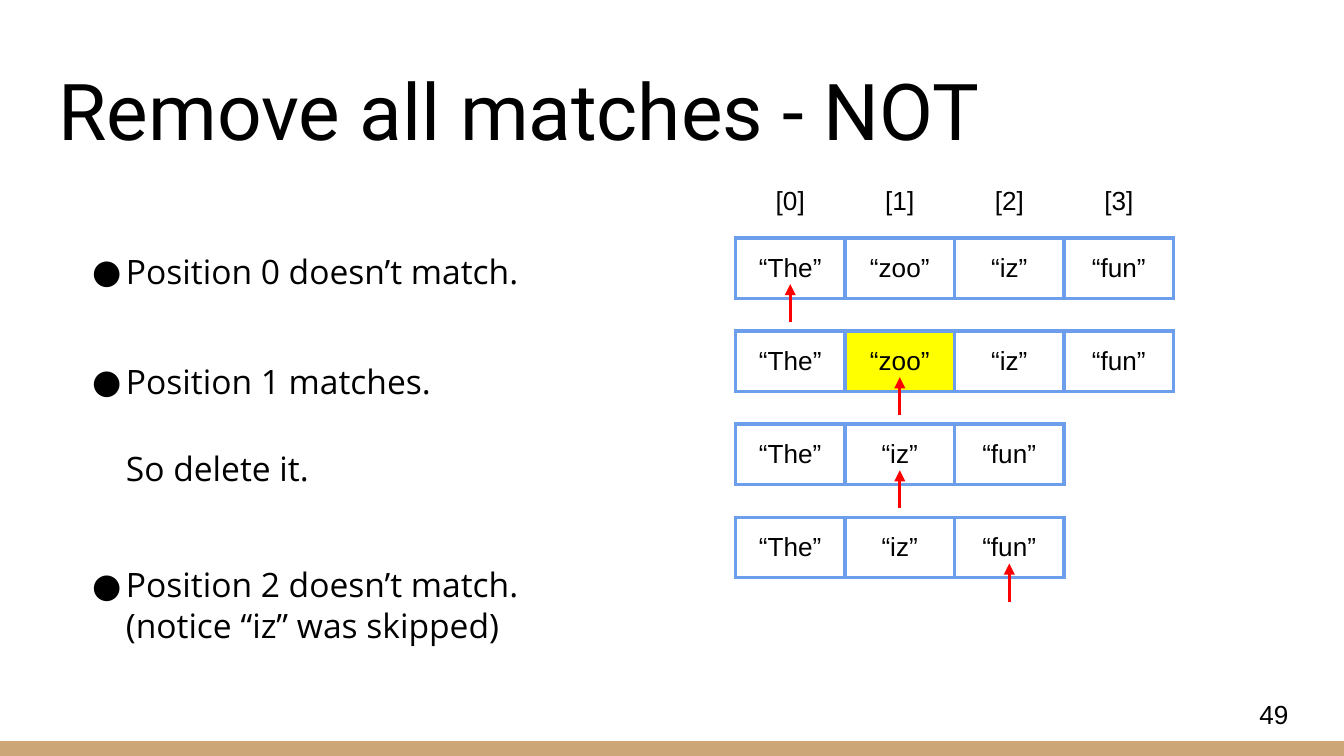
from lxml import etree
from pptx import Presentation
from pptx.dml.color import RGBColor
from pptx.enum.shapes import MSO_CONNECTOR, MSO_SHAPE
from pptx.enum.text import MSO_ANCHOR, PP_ALIGN
from pptx.oxml import parse_xml
from pptx.oxml.ns import qn
from pptx.util import Cm, Pt

STRAIGHT = MSO_CONNECTOR.STRAIGHT
RECTANGLE = MSO_SHAPE.RECTANGLE
TOP, MIDDLE, BOTTOM = MSO_ANCHOR.TOP, MSO_ANCHOR.MIDDLE, MSO_ANCHOR.BOTTOM
LEFT, CENTER = PP_ALIGN.LEFT, PP_ALIGN.CENTER

DRAWING = "http://schemas.openxmlformats.org/drawingml/2006/main"
BLACK, WHITE, YELLOW = "000000", "FFFFFF", "FFFF00"
RED, BLUE, TAN = "FF0000", "6D9EEB", "CCA677"
INSET = Cm(0.25)
COLUMN_WIDTH, ROW_HEIGHT, ROW_PITCH = 2.07, 1.14, 1.76

BULLETS = [
    ("Position 0 doesn’t match.", True, 37),
    ("Position 1 matches.", True, 25),
    ("So delete it.", False, 40),
    ("Position 2 doesn’t match.\v(notice “iz” was skipped)", True, 0),
]
STEPS = [
    (["“The”", "“zoo”", "“iz”", "“fun”"], 0, None),
    (["“The”", "“zoo”", "“iz”", "“fun”"], 1, 1),
    (["“The”", "“iz”", "“fun”"], 1, None),
    (["“The”", "“iz”", "“fun”"], 2, None),
]


def color(value):
    """Turn a hex string into a colour."""
    return RGBColor.from_string(value)


def write(paragraph, text, font="Arial", size=14, align=LEFT, line_spacing=1.0, space_after=0):
    """Write formatted text into a paragraph."""
    paragraph.text = text
    paragraph.alignment = align
    paragraph.line_spacing = line_spacing
    paragraph.space_after = Pt(space_after)
    for run in paragraph.runs:
        run.font.name = font
        run.font.size = Pt(size)
        run.font.color.rgb = color(BLACK)


def set_insets(target):
    """Give a text frame or cell equal margins."""
    target.margin_left = target.margin_right = INSET
    target.margin_top = target.margin_bottom = INSET


def add_frame(slide, box, anchor):
    """Add a wrapping text box and return its text frame."""
    frame = slide.shapes.add_textbox(*map(Cm, box)).text_frame
    frame.word_wrap = True
    frame.vertical_anchor = anchor
    set_insets(frame)
    return frame


def add_label(slide, box, text, anchor, **text_format):
    """Add a text box with one paragraph."""
    write(add_frame(slide, box, anchor).paragraphs[0], text, **text_format)


def indent(paragraph, bulleted):
    """Indent a paragraph and give it a round bullet if wanted."""
    properties = paragraph._p.get_or_add_pPr()
    properties.set("marL", str(Cm(1.27)))
    properties.set("indent", str(Cm(-0.64) if bulleted else 0))
    if bulleted:
        etree.SubElement(properties, qn("a:buFont"), typeface="Open Sans")
        etree.SubElement(properties, qn("a:buChar"), char="●")


def add_bullets(slide, box):
    """Add the explanation of each step."""
    frame = add_frame(slide, box, TOP)
    for index, (text, bulleted, space_after) in enumerate(BULLETS):
        paragraph = frame.add_paragraph() if index else frame.paragraphs[0]
        write(paragraph, text, font="Open Sans", size=18,
              line_spacing=1.02, space_after=space_after)
        indent(paragraph, bulleted)


def add_borders(cell):
    """Draw all four borders of a cell."""
    properties = cell._tc.get_or_add_tcPr()
    for position, side in enumerate(("lnL", "lnR", "lnT", "lnB")):
        properties.insert(position, parse_xml(
            f'<a:{side} xmlns:a="{DRAWING}" w="{Pt(2.25)}"><a:solidFill>'
            f'<a:srgbClr val="{BLUE}"/></a:solidFill></a:{side}>'))


def add_list_row(slide, left, top, texts, bordered=True, highlight=None):
    """Add one row of list cells as a table."""
    frame = slide.shapes.add_table(1, len(texts), Cm(left), Cm(top),
                                   Cm(COLUMN_WIDTH * len(texts)), Cm(ROW_HEIGHT))
    table = frame.table
    table.first_row = table.horz_banding = False
    for index, text in enumerate(texts):
        cell = table.cell(0, index)
        cell.vertical_anchor = MIDDLE
        set_insets(cell)
        write(cell.text_frame.paragraphs[0], text, align=CENTER)
        cell.fill.solid()
        cell.fill.fore_color.rgb = color(YELLOW if index == highlight else WHITE)
        if bordered:
            add_borders(cell)


def add_pointer(slide, x, tip):
    """Add a red arrow pointing up to its tip."""
    arrow = slide.shapes.add_connector(STRAIGHT, Cm(x), Cm(tip + 0.72), Cm(x), Cm(tip))
    arrow.line.color.rgb = color(RED)
    arrow.line.width = Pt(1.5)
    etree.SubElement(arrow.line._get_or_add_ln(), qn("a:tailEnd"), type="triangle")
    etree.SubElement(arrow._element.spPr, qn("a:effectLst"))


def add_trace(slide, left, top):
    """Add the index header and the list at every step."""
    add_list_row(slide, left, top, [f"[{index}]" for index in range(4)], bordered=False)
    for step, (texts, position, highlight) in enumerate(STEPS):
        row_top = top + 1.27 + step * ROW_PITCH
        add_list_row(slide, left, row_top, texts, highlight=highlight)
        add_pointer(slide, left + (position + 0.5) * COLUMN_WIDTH, row_top + 0.87)


def add_footer(slide, left, top, width, height):
    """Add the coloured bar and the page number above it."""
    bar = slide.shapes.add_shape(RECTANGLE, Cm(left), Cm(top), Cm(width), Cm(height))
    bar.shadow.inherit = False
    bar.fill.solid()
    bar.fill.fore_color.rgb = color(TAN)
    bar.line.fill.background()
    add_label(slide, (left + width - 1.85, top - 1.06, 1.52, 1.09), "49", MIDDLE)


def main():
    """Build and save the slide."""
    presentation = Presentation()
    presentation.slide_width, presentation.slide_height = Cm(25.4), Cm(14.29)
    slide = presentation.slides.add_slide(presentation.slide_layouts[6])
    add_footer(slide, 0, 14.01, 25.4, 0.28)
    add_label(slide, (0.86, 0.89, 23.67, 2.31), "Remove all matches - NOT",
              BOTTOM, font="Roboto", size=42)
    add_bullets(slide, (0.86, 4.47, 23.67, 9.32))
    add_trace(slide, 13.9, 3.23)
    presentation.save("out.pptx")


if __name__ == "__main__":
    main()
